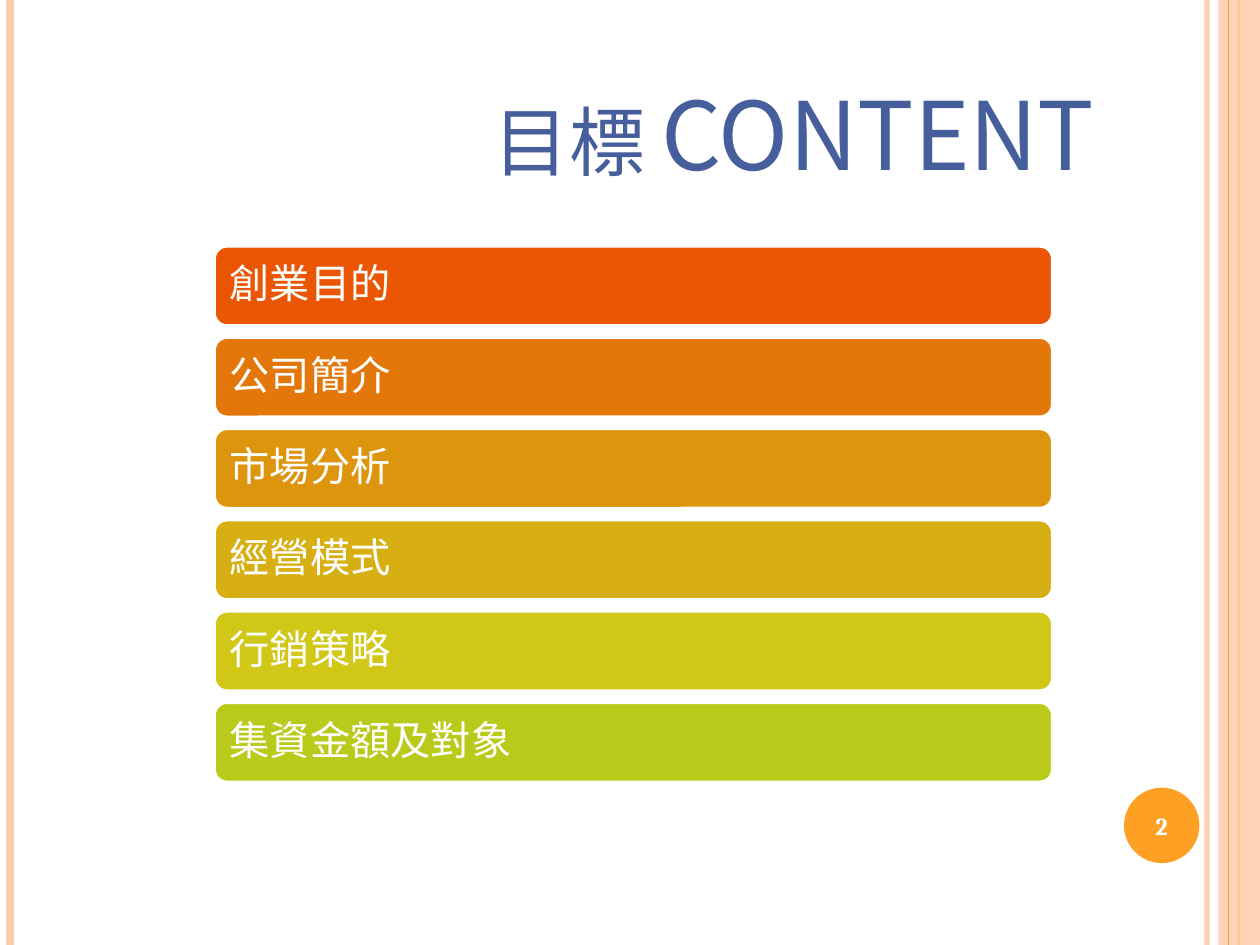
from lxml.etree import SubElement
from pptx import Presentation
from pptx.dml.color import RGBColor
from pptx.enum.shapes import MSO_CONNECTOR, MSO_SHAPE
from pptx.enum.text import MSO_ANCHOR, PP_ALIGN
from pptx.oxml.ns import qn
from pptx.util import Cm, Pt

SLIDE_WIDTH, SLIDE_HEIGHT = 25.4, 19.05
CJK_FONT = "Noto Sans CJK JP"
PEACH, ORANGE, WHITE = "FECDAC", "FDA023", "FFFFFF"

TITLE = "目標 CONTENT"
SECTIONS = [
    ("創業目的", "EB5605"),
    ("公司簡介", "E47709"),
    ("市場分析", "DE950E"),
    ("經營模式", "D7AF12"),
    ("行銷策略", "D0C716"),
    ("集資金額及對象", "B9CA1A"),
]
PAGE_NUMBER = "2"
STRIPES = [
    (24.33, PEACH, 3, 93),
    (0.2, PEACH, 4.5, 100),
    (24.97, ORANGE, 1.5, 100),
]
BAND_STRIPE = (24.77, ORANGE, 0.75, 100)

TITLE_FORMAT = {"size": Pt(54), "name": CJK_FONT}
SECTION_FORMAT = {"size": Pt(23), "name": CJK_FONT}
NUMBER_FORMAT = {"size": Pt(14), "name": "Cambria", "bold": True}
TITLE_FRAME = {"word_wrap": True, "vertical_anchor": MSO_ANCHOR.BOTTOM}
SECTION_FRAME = {"word_wrap": True, "vertical_anchor": MSO_ANCHOR.MIDDLE,
                 "margin_left": Cm(0.25), "margin_right": Cm(0.25),
                 "margin_top": Cm(0.25), "margin_bottom": Cm(0.25)}
NUMBER_FRAME = {"word_wrap": True, "vertical_anchor": MSO_ANCHOR.MIDDLE,
                "margin_left": 0, "margin_right": 0}

BAR_LEFT, BAR_TOP, BAR_WIDTH, BAR_HEIGHT = 4.3, 4.94, 16.94, 1.65
BAR_PITCH = 1.84


def rgb(value):
    return RGBColor.from_string(value)


def apply(target, values):
    for name, value in values.items():
        setattr(target, name, value)


def set_opacity(element, percent):
    if percent < 100:
        color = next(element.iter(qn("a:srgbClr")))
        SubElement(color, qn("a:alpha"), val=str(percent * 1000))


def add_stripe(slide, x, color, width, opacity):
    stripe = slide.shapes.add_connector(
        MSO_CONNECTOR.STRAIGHT, Cm(x), 0, Cm(x), Cm(SLIDE_HEIGHT))
    stripe.line.color.rgb = rgb(color)
    stripe.line.width = Pt(width)
    set_opacity(stripe._element.spPr, opacity)
    SubElement(stripe._element.spPr, qn("a:effectLst"))


def add_block(slide, preset, box, color, outline=None):
    block = slide.shapes.add_shape(preset, *map(Cm, box))
    block.shadow.inherit = False
    block.fill.solid()
    block.fill.fore_color.rgb = rgb(color)
    if outline:
        block.line.color.rgb = rgb(outline)
        block.line.width = Pt(3)
    else:
        block.line.fill.background()
    return block


def write(shape, text, frame_format, font_format, color, alignment):
    apply(shape.text_frame, frame_format)
    paragraph = shape.text_frame.paragraphs[0]
    paragraph.alignment = alignment
    run = paragraph.add_run()
    run.text = text
    apply(run.font, font_format)
    run.font.color.rgb = rgb(color)
    properties = run._r.get_or_add_rPr()
    SubElement(properties, qn("a:ea"), typeface=font_format["name"])
    return paragraph, properties


def main():
    presentation = Presentation()
    presentation.slide_width = Cm(SLIDE_WIDTH)
    presentation.slide_height = Cm(SLIDE_HEIGHT)
    slide = presentation.slides.add_slide(presentation.slide_layouts[6])

    for stripe in STRIPES:
        add_stripe(slide, *stripe)
    band = add_block(slide, MSO_SHAPE.RECTANGLE,
                     (24.56, 0, 0.84, SLIDE_HEIGHT), PEACH)
    set_opacity(band._element.spPr, 87)
    add_stripe(slide, *BAND_STRIPE)

    title = slide.shapes.add_textbox(Cm(1.27), Cm(0.76), Cm(20.75), Cm(3.18))
    _, title_properties = write(title, TITLE, TITLE_FRAME, TITLE_FORMAT,
                                "465E9C", PP_ALIGN.CENTER)
    title_properties.set("cap", "small")

    for index, (section, color) in enumerate(SECTIONS):
        top = BAR_TOP + index * BAR_PITCH
        bar = add_block(slide, MSO_SHAPE.ROUNDED_RECTANGLE,
                        (BAR_LEFT, top, BAR_WIDTH, BAR_HEIGHT), color, WHITE)
        paragraph, _ = write(bar, section, SECTION_FRAME, SECTION_FORMAT,
                             WHITE, PP_ALIGN.LEFT)
        paragraph.line_spacing = 0.9

    badge = add_block(slide, MSO_SHAPE.OVAL, (22.66, 15.88, 1.52, 1.52), ORANGE)
    write(badge, PAGE_NUMBER, NUMBER_FRAME, NUMBER_FORMAT, WHITE,
          PP_ALIGN.CENTER)

    presentation.save("out.pptx")


if __name__ == "__main__":
    main()
